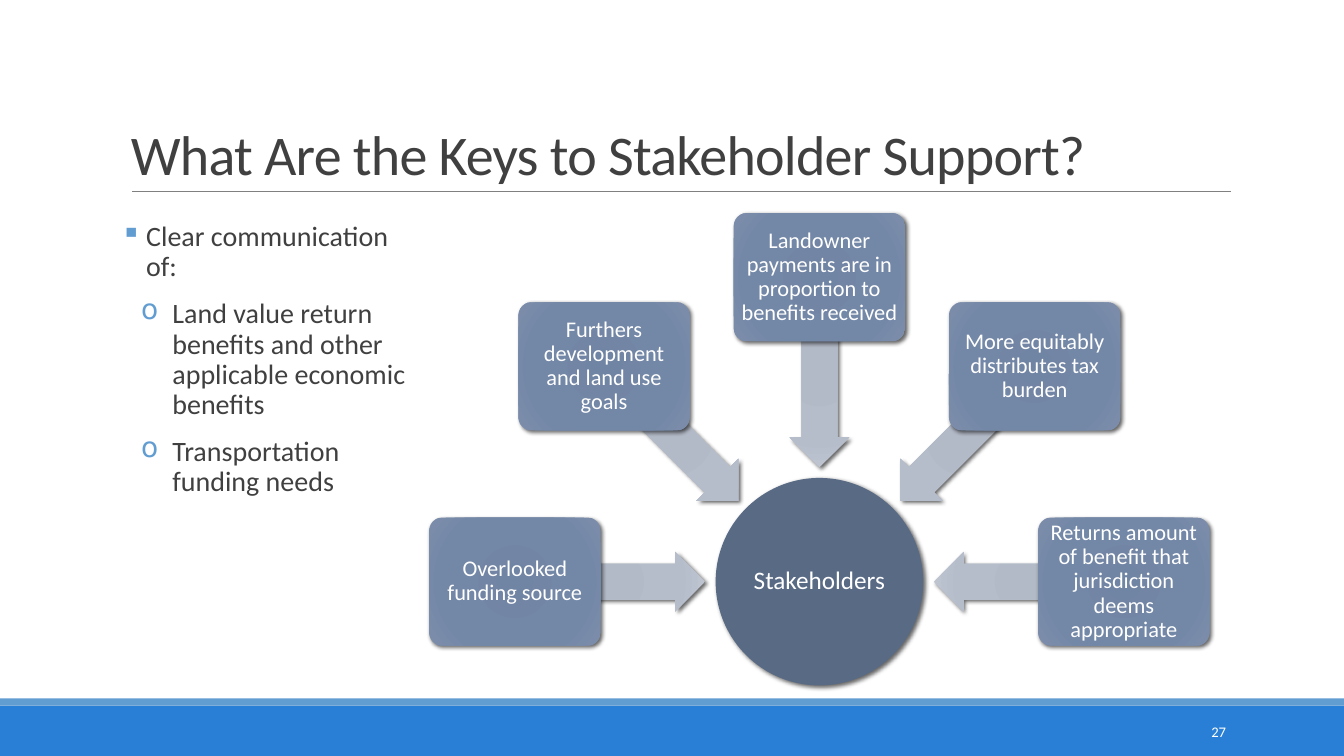
from math import cos, radians, sin

from lxml import etree
from pptx import Presentation
from pptx.dml.color import RGBColor
from pptx.enum.shapes import MSO_CONNECTOR, MSO_SHAPE
from pptx.enum.text import MSO_ANCHOR, PP_ALIGN
from pptx.oxml.ns import qn
from pptx.util import Inches, Pt

RECT, ELLIPSE = MSO_SHAPE.RECTANGLE, MSO_SHAPE.OVAL
ROUNDED, LEFT_ARROW = MSO_SHAPE.ROUNDED_RECTANGLE, MSO_SHAPE.LEFT_ARROW
STRAIGHT = MSO_CONNECTOR.STRAIGHT
TOP, MIDDLE, BOTTOM = MSO_ANCHOR.TOP, MSO_ANCHOR.MIDDLE, MSO_ANCHOR.BOTTOM
LEFT, CENTER, RIGHT = PP_ALIGN.LEFT, PP_ALIGN.CENTER, PP_ALIGN.RIGHT

WHITE = RGBColor(0xFF, 0xFF, 0xFF)
INK = RGBColor(0x40, 0x40, 0x40)
RULE_GRAY = RGBColor(0x80, 0x80, 0x80)
FOOTER_BLUE = RGBColor(0x29, 0x7F, 0xD5)
ACCENT_BLUE = RGBColor(0x62, 0x9D, 0xD1)
HUB_BLUE = RGBColor(0x59, 0x6A, 0x85)
KEY_SHADES = [RGBColor(0x70, 0x84, 0xA3), RGBColor(0x73, 0x85, 0xA4),
              RGBColor(0x73, 0x87, 0xA7), RGBColor(0x7D, 0x8E, 0xAB)]
ARROW_SHADES = [RGBColor(0xB1, 0xB8, 0xC5), RGBColor(0xB3, 0xBA, 0xC7),
                RGBColor(0xB5, 0xBC, 0xCA), RGBColor(0xBF, 0xC6, 0xD2)]
SHADE_STOPS = [0, 34, 70, 100]

# Square grid cells
COLUMNS, ROWS = 32, 18
CELL = Inches(7.5) // ROWS

HUB_COLUMN, HUB_ROW, HUB_SIZE = 19.51, 13.85, 4.94
KEY_RADIUS, KEY_WIDTH, KEY_HEIGHT = 7.25, 4.08, 3.05
ARROW_RADIUS, ARROW_LENGTH, ARROW_THICKNESS = 4.98, 4.51, 1.42
FIRST_ANGLE, ANGLE_STEP = 180, 45

KEYS = [
    "Overlooked funding source",
    "Furthers development and land use goals",
    "Landowner payments are in proportion to benefits received",
    "More equitably distributes tax burden",
    "Returns amount of benefit that jurisdiction deems appropriate",
]
MAIN_BULLET = {"mark": "▪", "indent": 0.25, "hanging": 0.25}
SUB_BULLET = {"mark": "o", "indent": 0.51, "hanging": 0.31}
POINTS = [
    ("Clear communication of:", MAIN_BULLET),
    ("Land value return benefits and other applicable economic benefits", SUB_BULLET),
    ("Transportation funding needs", SUB_BULLET),
]


def add_xml(parent, tag, **attributes):
    child = etree.SubElement(parent, qn(tag))
    for name, value in attributes.items():
        child.set(name, str(value))
    return child


def write(paragraph, text, size=16, color=WHITE, align=LEFT, line=None,
          before=0, tracking=None, bullet=None):
    paragraph.alignment = align
    paragraph.space_before = Pt(before)
    if line:
        paragraph.line_spacing = line
    run = paragraph.add_run()
    run.text = text
    run.font.name = "Calibri"
    run.font.size = Pt(size)
    run.font.color.rgb = color
    if tracking:
        run.font._element.set("spc", str(int(tracking * 100)))
    if bullet:
        properties = paragraph._p.get_or_add_pPr()
        properties.set("marL", str(Inches(bullet["indent"])))
        properties.set("indent", str(-Inches(bullet["hanging"])))
        add_xml(add_xml(properties, "a:buClr"), "a:srgbClr", val=ACCENT_BLUE)
        add_xml(properties, "a:buChar", char=bullet["mark"])


class GridSlide:
    """Draws on one slide; positions and sizes are in grid cells."""

    def __init__(self, slide):
        self.slide = slide

    def area(self, *cells):
        return [round(cell * CELL) for cell in cells]

    def frame(self, holder, anchor, side, vertical):
        frame = holder.text_frame
        frame.word_wrap = True
        frame.vertical_anchor = anchor
        frame.margin_left = frame.margin_right = Inches(side)
        frame.margin_top = frame.margin_bottom = Inches(vertical)
        return frame

    def textbox(self, *cells, anchor=TOP, side=0.1):
        box = self.slide.shapes.add_textbox(*self.area(*cells))
        return self.frame(box, anchor, side, 0.05)

    def block(self, kind, *cells, color):
        block = self.slide.shapes.add_shape(kind, *self.area(*cells))
        block.shadow.inherit = False
        block.line.fill.background()
        block.fill.solid()
        block.fill.fore_color.rgb = color
        return block

    def rule(self, start, end, row):
        rule = self.slide.shapes.add_connector(STRAIGHT, *self.area(start, row, end, row))
        rule.line.color.rgb = RULE_GRAY
        rule.line.width = Pt(0.5)
        add_xml(rule._element.spPr, "a:effectLst")

    def raised(self, kind, column, row, width, height, color):
        """Add a shadowed shape centred on a grid point."""
        shape = self.block(kind, column - width / 2, row - height / 2,
                           width, height, color=color)
        effects = shape._element.spPr.find(qn("a:effectLst"))
        shadow = add_xml(effects, "a:outerShdw", blurRad=Pt(3), dist=Pt(2),
                         dir=45 * 60000, algn="tl", rotWithShape=0)
        shade = add_xml(shadow, "a:srgbClr", val="000000")
        add_xml(shade, "a:alpha", val=60000)
        return shape

    def shade(self, shape, colors):
        """Fill a shape with a circular gradient."""
        shape.fill.gradient()
        gradient = shape._element.spPr.find(qn("a:gradFill"))
        gradient.clear()
        gradient.set("rotWithShape", "1")
        stops = add_xml(gradient, "a:gsLst")
        for position, color in zip(SHADE_STOPS, colors):
            add_xml(add_xml(stops, "a:gs", pos=position * 1000), "a:srgbClr", val=color)
        circle = add_xml(gradient, "a:path", path="circle")
        add_xml(circle, "a:fillToRect", l=100000, t=100000, r=100000, b=100000)

    def label(self, shape, text, size, margin):
        frame = self.frame(shape, MIDDLE, margin, margin)
        write(frame.paragraphs[0], text, size=size, align=CENTER, line=0.9)

    def hub(self, text):
        hub = self.raised(ELLIPSE, HUB_COLUMN, HUB_ROW, HUB_SIZE, HUB_SIZE, HUB_BLUE)
        self.label(hub, text, 18, 0.01)

    def spoke(self, text, angle):
        """Add a key box and its arrow pointing to the hub."""
        across, down = cos(radians(angle)), sin(radians(angle))
        arrow = self.raised(LEFT_ARROW, HUB_COLUMN + ARROW_RADIUS * across,
                            HUB_ROW + ARROW_RADIUS * down,
                            ARROW_LENGTH, ARROW_THICKNESS, ARROW_SHADES[0])
        arrow.adjustments[0], arrow.adjustments[1] = 0.6, 0.5
        arrow.rotation = angle % 360
        self.shade(arrow, ARROW_SHADES)
        key = self.raised(ROUNDED, HUB_COLUMN + KEY_RADIUS * across,
                          HUB_ROW + KEY_RADIUS * down,
                          KEY_WIDTH, KEY_HEIGHT, KEY_SHADES[0])
        key.adjustments[0] = 0.1
        self.shade(key, KEY_SHADES)
        self.label(key, text, 16, 0.03)


def main():
    presentation = Presentation()
    presentation.slide_width, presentation.slide_height = COLUMNS * CELL, ROWS * CELL
    page = GridSlide(presentation.slides.add_slide(presentation.slide_layouts[6]))

    page.block(RECT, 0, 16.8, COLUMNS, 1.2, color=FOOTER_BLUE)
    page.block(RECT, 0, 16.63, COLUMNS, 0.17, color=ACCENT_BLUE)
    page.rule(3.14, 29.3, 4.56)

    title = page.textbox(2.88, 0.74, 26.4, 3.82, anchor=BOTTOM)
    write(title.paragraphs[0], "What Are the Keys to Stakeholder Support?",
          size=40, color=INK, line=0.85, tracking=-0.5)

    points = page.textbox(2.88, 5.18, 7.22, 10.25, side=0)
    for index, (text, bullet) in enumerate(POINTS):
        paragraph = points.add_paragraph() if index else points.paragraphs[0]
        write(paragraph, text, size=20, color=INK, line=0.9, before=12, bullet=bullet)

    number = page.textbox(26, 16.94, 3.43, 0.96, anchor=MIDDLE)
    write(number.paragraphs[0], "27", size=10.5, align=RIGHT)

    page.hub("Stakeholders")
    for index, text in enumerate(KEYS):
        page.spoke(text, FIRST_ANGLE + ANGLE_STEP * index)

    presentation.save("out.pptx")


if __name__ == "__main__":
    main()
